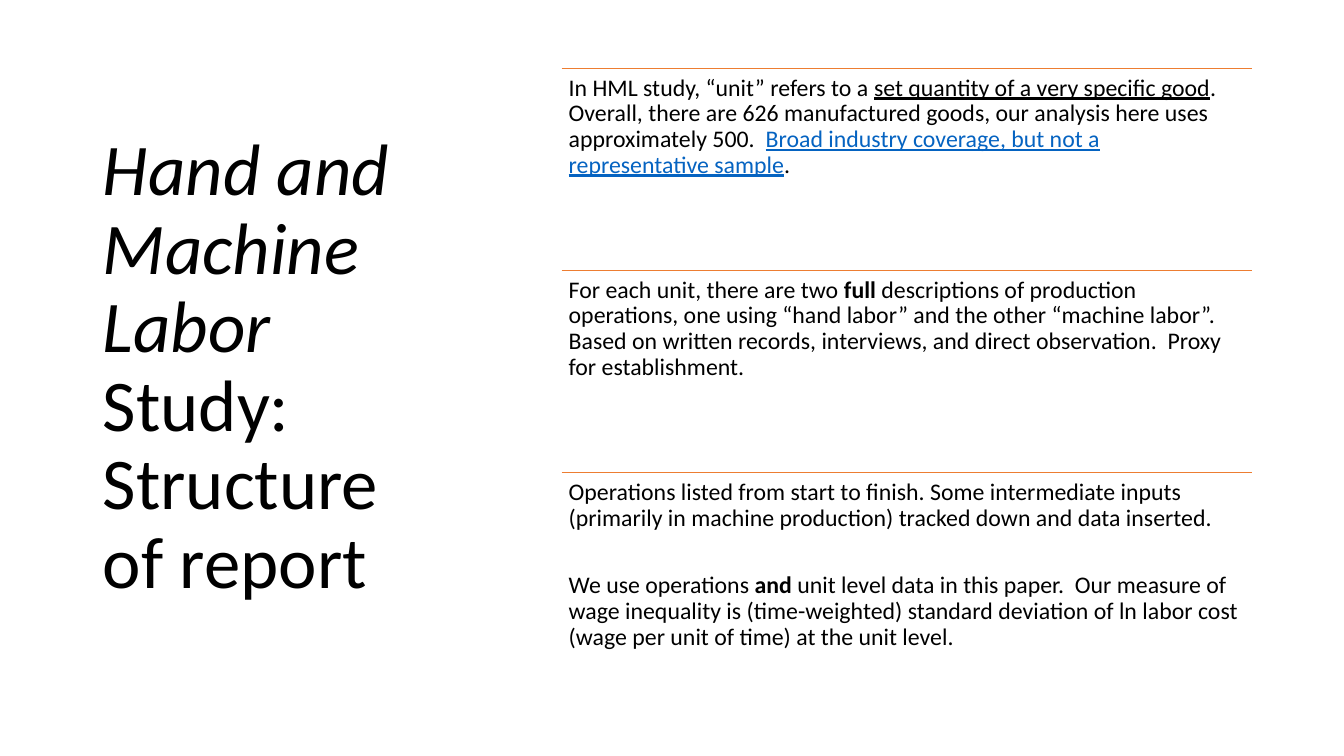
import pptx
import pptx.util
import pptx.dml.color
import pptx.enum.shapes
import pptx.enum.text
import pptx.oxml.ns
from lxml import etree

Inches, Pt = pptx.util.Inches, pptx.util.Pt

FONT = "Calibri"
BLACK, LINK, ORANGE = "000000", "0563C1", "ED7D31"

# A run is (text, style); styles: "" plain, "b" bold, "i" italic, "u" underlined, "link"
TITLE = [("Hand and Machine Labor ", "i"), ("Study:\vStructure of report", "")]
BLOCKS = [
    [[("In HML study, “unit” refers to a ", ""),
      ("set quantity of a very specific good", "u"),
      (". Overall, there are 626 manufactured goods, our analysis here uses "
       "approximately 500.  ", ""),
      ("Broad industry coverage, but not a representative sample", "link"),
      (".", "")]],
    [[("For each unit, there are two ", ""),
      ("full", "b"),
      (" descriptions of production operations, one using “hand labor” and the other "
       "“machine labor”. Based on written records, interviews, and direct observation.  "
       "Proxy for establishment.", "")]],
    [[("Operations listed from start to finish. Some intermediate inputs (primarily in "
       "machine production) tracked down and data inserted.", "")],
     [("We use operations ", ""),
      ("and", "b"),
      (" unit level data in this paper.  Our measure of wage inequality is "
       "(time-weighted) standard deviation of ln labor cost (wage per unit of time) "
       "at the unit level.", "")]],
]
LEFT, TOP, WIDTH, STEP = 5.57, 0.68, 6.85, 2.005
INSET = 0.07


def color(code):
    return pptx.dml.color.RGBColor.from_string(code)


def write(para, runs, size):
    para.alignment = pptx.enum.text.PP_ALIGN.LEFT
    para.line_spacing = 0.9
    para.font.name = FONT
    para.font.size = Pt(size)
    para.font.color.rgb = color(BLACK)
    for text, style in runs:
        for n, part in enumerate(text.split("\v")):
            if n:
                para.add_line_break()
            run = para.add_run()
            run.text = part
            if style == "b":
                run.font.bold = True
            elif style == "i":
                run.font.italic = True
            elif style in ("u", "link"):
                run.font.underline = True
            if style == "link":
                run.font.color.rgb = color(LINK)


def rule(slide, top):
    """Draw the orange line above a block."""
    line = slide.shapes.add_connector(
        pptx.enum.shapes.MSO_CONNECTOR.STRAIGHT,
        Inches(LEFT), Inches(top), Inches(LEFT + WIDTH), Inches(top))
    line.line.color.rgb = color(ORANGE)
    line.line.width = Pt(1)
    etree.SubElement(line._element.spPr, pptx.oxml.ns.qn("a:effectLst"))


def block(slide, top, paras):
    box = slide.shapes.add_textbox(Inches(LEFT), Inches(top), Inches(WIDTH), Inches(2))
    frame = box.text_frame
    frame.word_wrap = True
    frame.margin_left = frame.margin_right = Inches(INSET)
    frame.margin_top = frame.margin_bottom = Inches(INSET)
    for n, runs in enumerate(paras):
        para = frame.add_paragraph() if n else frame.paragraphs[0]
        if n:
            para.space_before = Pt(30)
        write(para, runs, 17)


def main():
    deck = pptx.Presentation()
    deck.slide_width, deck.slide_height = Inches(13.33), Inches(7.5)
    slide = deck.slides.add_slide(deck.slide_layouts[5])

    title = slide.shapes.title
    title.left, title.top = Inches(0.92), Inches(0.61)
    title.width, title.height = Inches(3.69), Inches(6.09)
    frame = title.text_frame
    frame.word_wrap = True
    frame.auto_size = pptx.enum.text.MSO_AUTO_SIZE.NONE
    frame.vertical_anchor = pptx.enum.text.MSO_ANCHOR.MIDDLE
    write(frame.paragraphs[0], TITLE, 52)

    for n, paras in enumerate(BLOCKS):
        top = TOP + n * STEP
        rule(slide, top)
        block(slide, top, paras)

    deck.save("out.pptx")


if __name__ == "__main__":
    main()
